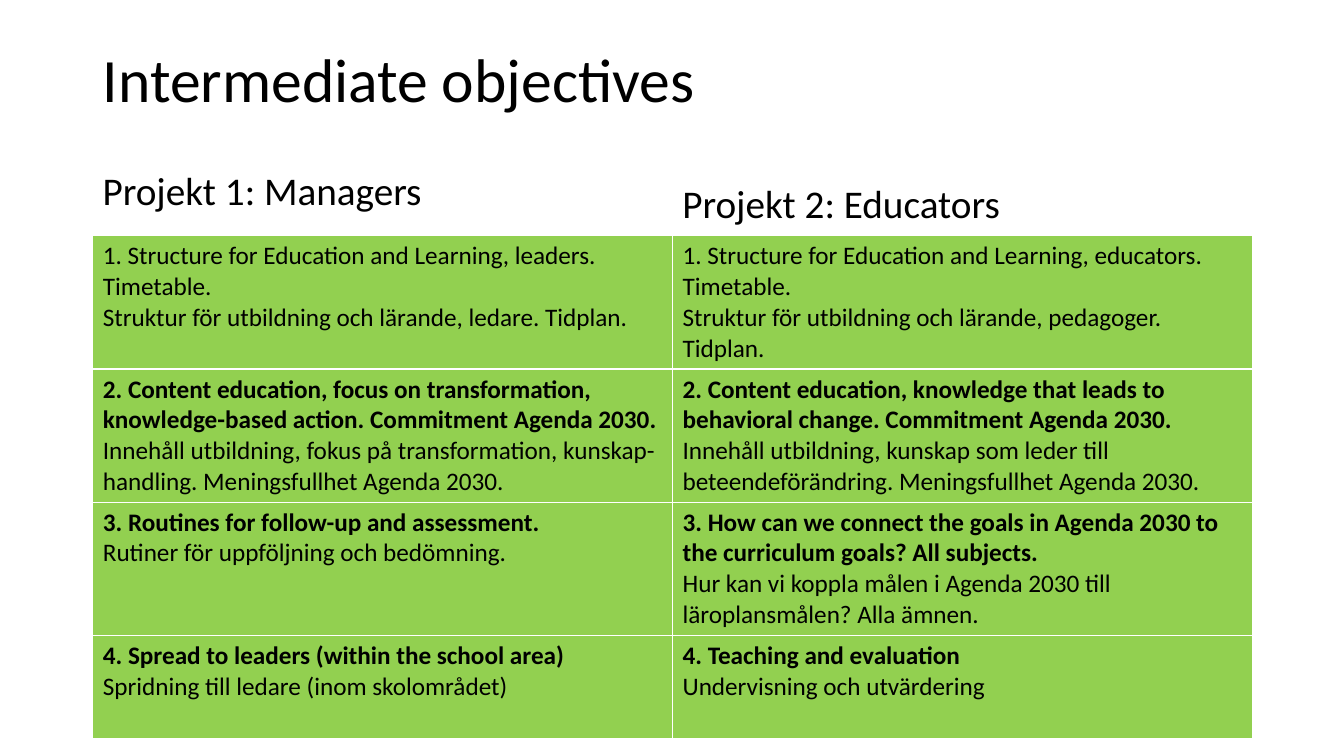
from lxml import etree
from pptx import Presentation
from pptx import util as u
from pptx.dml.color import RGBColor
from pptx.enum import text
from pptx.oxml import ns

BLACK = RGBColor(0x00, 0x00, 0x00)
WHITE = RGBColor(0xFF, 0xFF, 0xFF)
GREEN = RGBColor(0x92, 0xD0, 0x50)

# Slide and grid
presentation = Presentation()
presentation.slide_width = u.Inches(13.33)
presentation.slide_height = u.Inches(7.5)
slide = presentation.slides.add_slide(presentation.slide_layouts[5])
LEFT = u.Inches(0.92)
COLUMN = u.Inches(5.75)
ROW_HEIGHTS = [1.32, 1.32, 1.32, 1.02]


def write(paragraph, content, size=18, bold=False, spacing=1.0):
    paragraph.alignment = text.PP_ALIGN.LEFT
    paragraph.line_spacing = spacing
    run = paragraph.add_run()
    run.text = content
    run.font.name = "Calibri"
    run.font.size = u.Pt(size)
    run.font.bold = bold
    run.font.color.rgb = BLACK


def add_borders(cell, color=WHITE, width=1):
    properties = cell._tc.get_or_add_tcPr()
    for side in ("lnL", "lnR", "lnT", "lnB"):
        line = etree.SubElement(properties, ns.qn(f"a:{side}"), w=str(u.Pt(width)))
        fill = etree.SubElement(line, ns.qn("a:solidFill"))
        etree.SubElement(fill, ns.qn("a:srgbClr"), val=str(color))


# Title
title = slide.shapes.title
title.left, title.top = LEFT, u.Inches(0.4)
title.width, title.height = 2 * COLUMN, u.Inches(0.84)
title.text_frame.vertical_anchor = text.MSO_ANCHOR.MIDDLE
write(title.text_frame.paragraphs[0], "Intermediate objectives", size=44, spacing=0.9)

# Objectives: English line, then Swedish line, for each project
objectives = [
    [("1. Structure for Education and Learning, leaders. Timetable.",
      "Struktur för utbildning och lärande, ledare. Tidplan."),
     ("1. Structure for Education and Learning, educators. Timetable.",
      "Struktur för utbildning och lärande, pedagoger. Tidplan.")],
    [("2. Content education, focus on transformation, knowledge-based action. "
      "Commitment Agenda 2030.",
      "Innehåll utbildning, fokus på transformation, kunskap-handling. "
      "Meningsfullhet Agenda 2030."),
     ("2. Content education, knowledge that leads to behavioral change. "
      "Commitment Agenda 2030.",
      "Innehåll utbildning, kunskap som leder till beteendeförändring. "
      "Meningsfullhet Agenda 2030.")],
    [("3. Routines for follow-up and assessment.",
      "Rutiner för uppföljning och bedömning."),
     ("3. How can we connect the goals in Agenda 2030 to the curriculum goals? "
      "All subjects.",
      "Hur kan vi koppla målen i Agenda 2030 till läroplansmålen? Alla ämnen.")],
    [("4. Spread to leaders (within the school area)",
      "Spridning till ledare (inom skolområdet)"),
     ("4. Teaching and evaluation",
      "Undervisning och utvärdering")],
]

# Table
table = slide.shapes.add_table(
    len(objectives), 2, LEFT, u.Inches(2.34), 2 * COLUMN, u.Inches(sum(ROW_HEIGHTS))
).table
table.first_row = False
table.horz_banding = False
for column in table.columns:
    column.width = COLUMN
for row_index, (height, row) in enumerate(zip(ROW_HEIGHTS, objectives)):
    table.rows[row_index].height = u.Inches(height)
    for column_index, (english, swedish) in enumerate(row):
        cell = table.cell(row_index, column_index)
        add_borders(cell)
        cell.fill.solid()
        cell.fill.fore_color.rgb = GREEN
        write(cell.text_frame.paragraphs[0], english, bold=row_index > 0)
        write(cell.text_frame.add_paragraph(), swedish)

# Project headings above the columns
headings = [("Projekt 1: Managers", 1.6), ("Projekt 2: Educators", 1.73)]
for index, (heading, top) in enumerate(headings):
    box = slide.shapes.add_textbox(
        LEFT + index * COLUMN, u.Inches(top), u.Inches(3.4), u.Inches(0.57))
    box.text_frame.word_wrap = False
    box.text_frame.auto_size = text.MSO_AUTO_SIZE.SHAPE_TO_FIT_TEXT
    write(box.text_frame.paragraphs[0], heading, size=28)

presentation.save("out.pptx")
